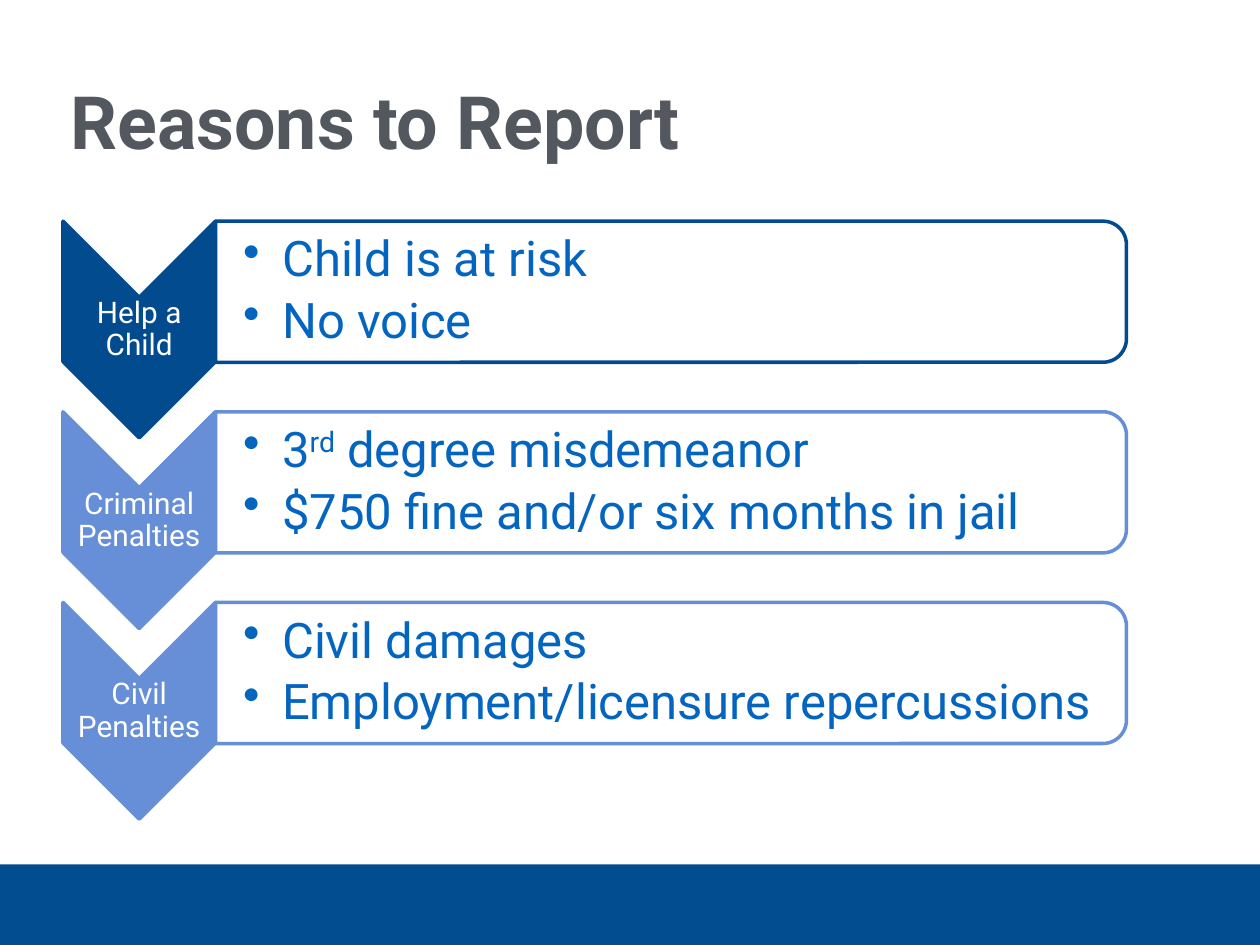
from lxml.etree import SubElement
from pptx import Presentation
from pptx.dml.color import RGBColor
from pptx.enum.shapes import MSO_SHAPE
from pptx.enum.text import MSO_ANCHOR, PP_ALIGN
from pptx.oxml.ns import qn
from pptx.util import Inches, Pt

NAVY = RGBColor(0x02, 0x4B, 0x8E)
BAND_BLUE = RGBColor(0x02, 0x4C, 0x90)
LIGHT_BLUE = RGBColor(0x66, 0x8F, 0xD8)
TEXT_BLUE = RGBColor(0x03, 0x65, 0xC0)
GRAY = RGBColor(0x53, 0x58, 0x5F)
WHITE = RGBColor(0xFF, 0xFF, 0xFF)

deck = Presentation()
deck.slide_width, deck.slide_height = Inches(10), Inches(7.5)
slide = deck.slides.add_slide(deck.slide_layouts[6])

# Grid of 100 columns by 75 rows
COL = deck.slide_width / 100
ROW = deck.slide_height / 75


def add_outline(preset, left, top, width, height, fill, line, turned=True):
    """Place a preset by the area it covers; turned ones are rotated a quarter."""
    x, y, w, h = left * COL, top * ROW, width * COL, height * ROW
    if turned:
        x, y, w, h = x + (w - h) / 2, y + (h - w) / 2, h, w
    outline = slide.shapes.add_shape(preset, int(x), int(y), int(w), int(h))
    outline.rotation = 90 if turned else 0
    outline.shadow.inherit = False
    outline.fill.solid()
    outline.fill.fore_color.rgb = fill
    if line is None:
        outline.line.fill.background()
    else:
        outline.line.color.rgb = line
        outline.line.width = Pt(2)
    return outline


def add_text(lines, left, top, width, height, *, size, color, bold=False,
             align=PP_ALIGN.LEFT, anchor=MSO_ANCHOR.MIDDLE, insets=(0.1, 0.1),
             spacing=1.0, after=0, bulleted=False):
    """Each line is a list of (text, is_superscript) pieces; insets are left, other."""
    area = slide.shapes.add_textbox(
        int(left * COL), int(top * ROW), int(width * COL), int(height * ROW))
    frame = area.text_frame
    frame.word_wrap = True
    frame.vertical_anchor = anchor
    frame.margin_left = int(insets[0] * COL)
    frame.margin_right = frame.margin_top = frame.margin_bottom = int(insets[1] * COL)
    for number, pieces in enumerate(lines):
        paragraph = frame.paragraphs[0] if number == 0 else frame.add_paragraph()
        if bulleted:
            properties = paragraph._p.get_or_add_pPr()
            properties.set("marL", str(int(3.1 * COL)))
            properties.set("indent", str(int(-3.1 * COL)))
            SubElement(properties, qn("a:buChar")).set("char", "•")
        paragraph.alignment = align
        paragraph.line_spacing = spacing
        paragraph.space_after = Pt(after)
        for text, is_superscript in pieces:
            run = paragraph.add_run()
            run.text = text
            run.font.name = "Roboto"
            run.font.size = Pt(size)
            run.font.bold = bold
            run.font.color.rgb = color
            if is_superscript:
                run._r.get_or_add_rPr().set("baseline", "30000")


# Footer band and title
add_outline(MSO_SHAPE.RECTANGLE, 0, 68.6, 100, 6.4, BAND_BLUE, None, turned=False)
add_text([[("Reasons to Report", False)]], 4.9, 4.2, 84.4, 9.2, size=42, color=GRAY,
         bold=True, anchor=MSO_ANCHOR.BOTTOM, insets=(0.7, 0.4))

# Reasons: chevron label, accent colour, two bullets
REASONS = [
    ("Help a Child", NAVY,
     [[("Child is at risk", False)], [("No voice", False)]]),
    ("Criminal Penalties", LIGHT_BLUE,
     [[("3", False), ("rd", True), (" degree misdemeanor", False)],
      [("$750 fine and/or six months in jail", False)]]),
    ("Civil Penalties", LIGHT_BLUE,
     [[("Civil damages", False)], [("Employment/licensure repercussions", False)]]),
]
FIRST_TOP, PITCH = 17.55, 15.13
LABEL_LEFT, LABEL_WIDTH = 5, 12.1
PANEL_LEFT = LABEL_LEFT + LABEL_WIDTH

for index, (label, accent, bullets) in enumerate(REASONS):
    top = FIRST_TOP + index * PITCH

    # Chevron pointing down, with its label
    add_outline(MSO_SHAPE.CHEVRON, LABEL_LEFT, top, LABEL_WIDTH, 17.2, accent, accent)
    add_text([[(label, False)]], LABEL_LEFT, top + 6.05, LABEL_WIDTH, 5.2, size=17,
             color=WHITE, align=PP_ALIGN.CENTER, insets=(0.1, 0.1), spacing=0.9, after=7)

    # Panel rounded on the right, slightly see-through
    panel = add_outline(MSO_SHAPE.ROUND_2_SAME_RECTANGLE, PANEL_LEFT, top, 72.3, 11.2,
                        WHITE, accent)
    panel_color = panel.fill._xPr.find(qn("a:solidFill"))[0]
    SubElement(panel_color, qn("a:alpha")).set("val", "90000")
    add_text(bullets, PANEL_LEFT, top + 0.55, 71.8, 10.1, size=28, color=TEXT_BLUE,
             insets=(2.2, 0.2), spacing=0.9, after=5, bulleted=True)

deck.save("out.pptx")
